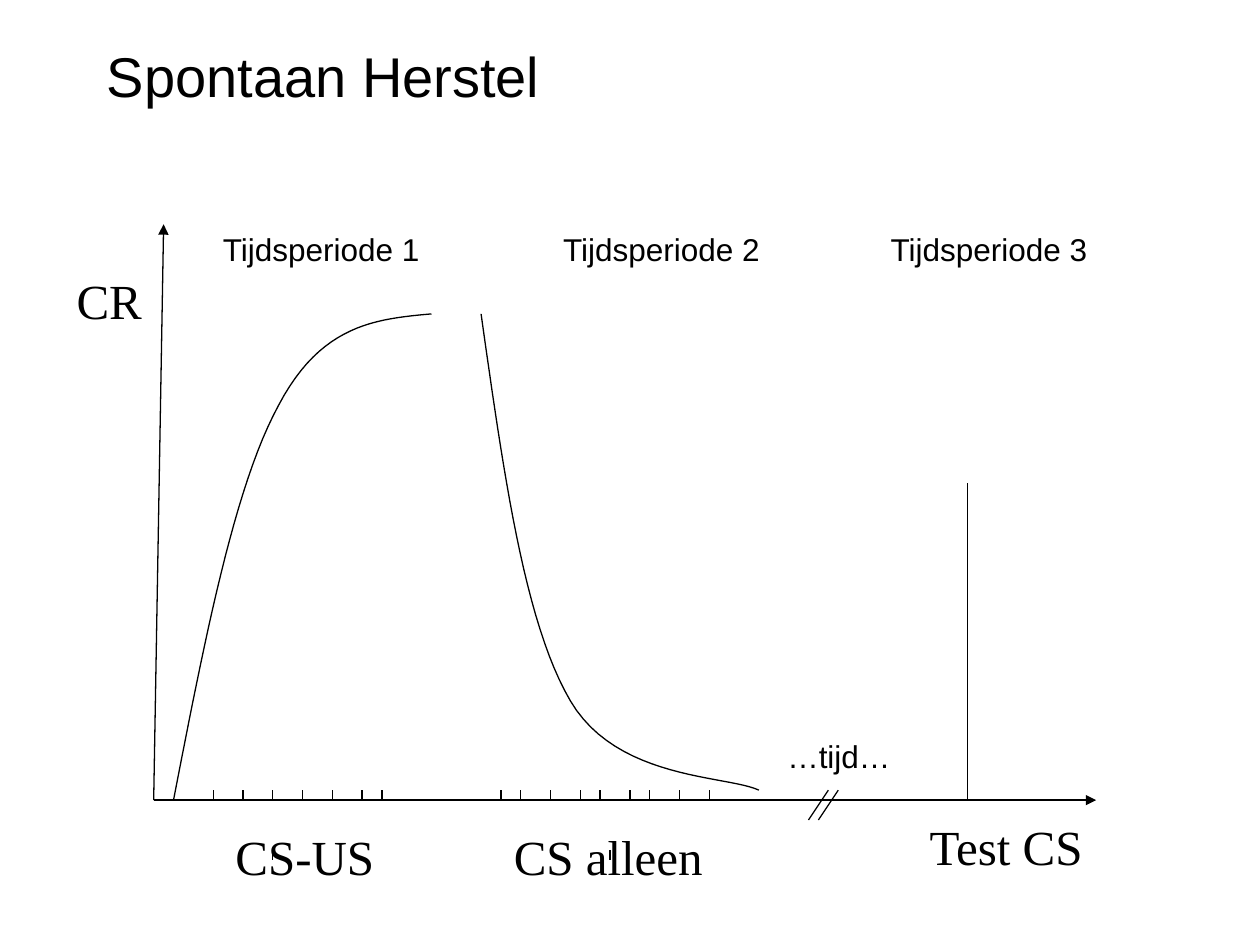
from pptx import Presentation
from pptx.dml.color import RGBColor
from pptx.enum.shapes import MSO_CONNECTOR
from pptx.oxml.ns import qn
from pptx.util import Inches, Pt
from lxml import etree

STRAIGHT = MSO_CONNECTOR.STRAIGHT
BLACK = "000000"
GRID = 2 / 25.4  # the diagram sits on a 2 mm grid
CURVE_STEPS = 24

SMALL = {"name": "Arial", "size": Pt(18)}
LARGE = {"name": "Times New Roman", "size": Pt(28)}
TITLE = {"name": "Arial", "size": Pt(32)}

# Grid units, counted right and up from the origin of the axes
TICKS_ACQUISITION = (6, 9, 12, 15, 18, 21, 23)
TICKS_EXTINCTION = (35, 37, 40, 43, 45, 48, 50, 53, 56)
TICKS_BELOW_AXIS = (12, 46)
ACQUISITION_CURVE = [(2, 0), (5.1, 15.9), (8.1, 31.6), (12.6, 39.8),
                     (16.9, 48), (22.5, 48.5), (28, 49)]
EXTINCTION_CURVE = [(33, 49), (35.2, 33.5), (37.3, 18), (42, 10),
                    (46.7, 2), (57.8, 2.5), (61, 1)]

# Text, left and top from the diagram box, width, height, font (inches)
LABELS = [
    ("CR", -0.71, 0.32, 0.72, 0.57, LARGE),
    ("CS-US", 0.55, 4.73, 1.31, 0.57, LARGE),
    ("CS alleen", 2.76, 4.73, 1.7, 0.57, LARGE),
    ("Test CS", 6.06, 4.65, 1.44, 0.57, LARGE),
    ("Tijdsperiode 1", 0.45, 0, 1.78, 0.4, SMALL),
    ("Tijdsperiode 2", 3.15, 0, 1.78, 0.4, SMALL),
    ("Tijdsperiode 3", 5.75, 0, 1.78, 0.4, SMALL),
    ("…tijd…", 4.93, 4.02, 1.03, 0.4, SMALL),
]


def color(hex_value):
    return RGBColor.from_string(hex_value)


def add_text(slide, text, box, font_format, wrap=False):
    shape = slide.shapes.add_textbox(*(Inches(value) for value in box))
    shape.text_frame.word_wrap = wrap
    run = shape.text_frame.paragraphs[0].add_run()
    run.text = text
    for name, value in font_format.items():
        setattr(run.font, name, value)
    run.font.color.rgb = color(BLACK)


def style_line(shape):
    shape.line.color.rgb = color(BLACK)
    shape.line.width = Pt(0.75)


def add_line(slide, start, end, arrow=False):
    line = slide.shapes.add_connector(STRAIGHT, *start, *end)
    style_line(line)
    if arrow:
        tail = etree.SubElement(line.line._get_or_add_ln(), qn("a:tailEnd"))
        tail.set("type", "triangle")
    etree.SubElement(line._element.spPr, qn("a:effectLst"))


def curve_points(controls):
    """Points along a chain of cubic Bézier segments."""
    points = [controls[0]]
    for first in range(0, len(controls) - 1, 3):
        segment = controls[first:first + 4]
        for step in range(1, CURVE_STEPS + 1):
            t = step / CURVE_STEPS
            weights = ((1 - t) ** 3, 3 * t * (1 - t) ** 2,
                       3 * t ** 2 * (1 - t), t ** 3)
            points.append(tuple(
                sum(weight * point[axis]
                    for weight, point in zip(weights, segment))
                for axis in (0, 1)))
    return points


def add_curve(slide, points):
    builder = slide.shapes.build_freeform(*points[0])
    builder.add_line_segments(points[1:], close=False)
    shape = builder.convert_to_shape()
    shape.fill.background()
    shape.shadow.inherit = False
    style_line(shape)


def build_diagram(slide, left, top, width, height):
    def place(x, y):
        return (Inches(left + x * GRID), Inches(top + height - y * GRID))

    # Axes
    origin = place(0, 0)
    add_line(slide, origin, place(1, height / GRID), arrow=True)
    add_line(slide, origin, place(width / GRID, 0), arrow=True)

    # Response curves and the test response
    for controls in (ACQUISITION_CURVE, EXTINCTION_CURVE):
        add_curve(slide, [place(*point) for point in curve_points(controls)])
    add_line(slide, place(82, 0), place(82, 32))

    # Trial ticks
    for positions, base in ((TICKS_ACQUISITION + TICKS_EXTINCTION, 0),
                            (TICKS_BELOW_AXIS, -6)):
        for x in positions:
            add_line(slide, place(x, base), place(x, base + 1))

    # Break in the time axis
    for x in (66, 67):
        add_line(slide, place(x, -2), place(x + 2, 1))

    # Labels
    for text, x, y, label_width, label_height, font_format in LABELS:
        add_text(slide, text, (left + x, top + y, label_width, label_height),
                 font_format)


def main():
    presentation = Presentation()
    presentation.slide_width = Inches(10)
    presentation.slide_height = Inches(7.5)
    slide = presentation.slides.add_slide(presentation.slide_layouts[6])
    add_text(slide, "Spontaan Herstel", (0.75, 0.28, 8.5, 6.38), TITLE,
             wrap=True)
    build_diagram(slide, 1.22, 1.78, 7.48, 4.57)
    presentation.save("out.pptx")


if __name__ == "__main__":
    main()
